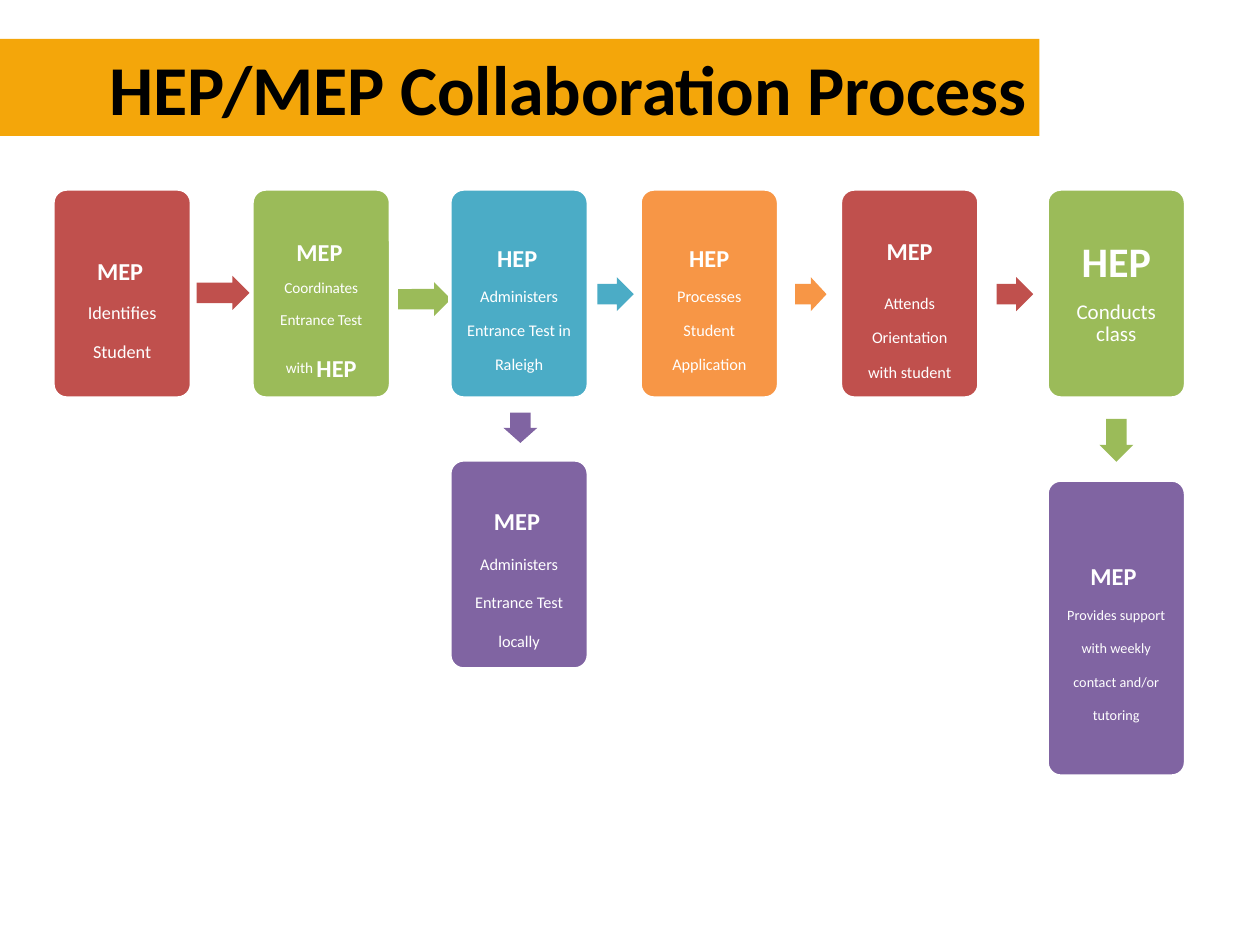
from copy import deepcopy
from dataclasses import dataclass

from pptx import Presentation
from pptx.dml.color import RGBColor
from pptx.enum.shapes import MSO_SHAPE
from pptx.enum.text import MSO_ANCHOR, MSO_AUTO_SIZE, PP_ALIGN
from pptx.util import Inches, Pt


@dataclass(frozen=True)
class Theme:
    font: str = "Calibri"
    gold: str = "F4A60A"
    red: str = "C0504D"
    green: str = "9BBB59"
    teal: str = "4BACC6"
    orange: str = "F79646"
    purple: str = "8064A2"
    white: str = "FFFFFF"
    black: str = "000000"
    title: int = 40
    agency: int = 24
    large: int = 18
    body: int = 16
    compact: int = 15
    small: int = 14
    tiny: int = 12


THEME = Theme()
CARD_WIDTH, CARD_HEIGHT, CARD_TOP = 1.1, 1.66, 1.5
ARROW_HEIGHT = 0.27


class ProcessSlide:
    def __init__(self, slide, theme):
        self.slide = slide
        self.theme = theme

    def block(self, preset, left, top, width, height, color):
        block = self.slide.shapes.add_shape(
            preset, Inches(left), Inches(top), Inches(width), Inches(height))
        block.shadow.inherit = False
        block.fill.solid()
        block.fill.fore_color.rgb = RGBColor.from_string(color)
        block.line.fill.background()
        return block

    def run(self, paragraph, text, size, bold, color, lowered=False):
        run = paragraph.add_run()
        run.text = text
        run.font.name = self.theme.font
        run.font.size = Pt(size)
        run.font.bold = bold
        run.font.color.rgb = RGBColor.from_string(color)
        if lowered:
            run.font._element.set("baseline", "-25000")
        return run

    def title(self, text, left, top, width, height):
        banner = self.block(MSO_SHAPE.RECTANGLE, left, top, width, height, self.theme.gold)
        frame = banner.text_frame
        frame.word_wrap = True
        frame.auto_size = MSO_AUTO_SIZE.SHAPE_TO_FIT_TEXT
        frame.vertical_anchor = MSO_ANCHOR.TOP
        heading = frame.paragraphs[0]
        heading.alignment = PP_ALIGN.RIGHT
        self.run(heading, text, self.theme.title, True, self.theme.black)

    def card(self, left, color, paragraphs, top=CARD_TOP, height=CARD_HEIGHT,
             line_spacing=0.9, after=0, lowered=True):
        card = self.block(MSO_SHAPE.ROUNDED_RECTANGLE, left, top, CARD_WIDTH, height, color)
        card.adjustments[0] = 0.1
        card.line.color.rgb = RGBColor.from_string(self.theme.white)
        card.line.width = Pt(2)
        frame = card.text_frame
        frame.word_wrap = True
        frame.vertical_anchor = MSO_ANCHOR.MIDDLE
        frame.margin_left = frame.margin_right = Inches(0.1)
        frame.margin_top = frame.margin_bottom = Inches(0.1)
        for index, runs in enumerate(paragraphs):
            paragraph = frame.add_paragraph() if index else frame.paragraphs[0]
            paragraph.alignment = PP_ALIGN.CENTER
            paragraph.line_spacing = line_spacing
            paragraph.space_after = Pt(round(after * runs[0][1], 1))
            for text, size, bold in runs:
                first, *rest = text.split("\n")
                run = self.run(paragraph, first, size, bold, self.theme.white, lowered)
                for line in rest:
                    paragraph.add_line_break()
                    paragraph._p[-1].append(deepcopy(run.font._element))
                    self.run(paragraph, line, size, bold, self.theme.white, lowered)

    def arrow(self, left, top, length, color, rotation=0):
        arrow = self.block(MSO_SHAPE.RIGHT_ARROW, left, top, length, ARROW_HEIGHT, color)
        arrow.adjustments[0] = 0.6
        arrow.adjustments[1] = 0.5
        arrow.rotation = rotation


def main():
    presentation = Presentation()
    presentation.slide_width = Inches(10)
    presentation.slide_height = Inches(7.5)
    t = THEME
    process = ProcessSlide(presentation.slides.add_slide(presentation.slide_layouts[6]), t)
    mep = ("MEP", t.agency, True)
    hep = ("HEP", t.agency, True)

    process.title("HEP/MEP Collaboration Process", 0, 0.31, 8.25, 0.77)

    process.card(0.42, t.red, [
        [mep, (" ", t.large, False)],
        [("Identifies Student", t.large, False)]])
    process.arrow(1.56, 2.19, 0.42, t.red)

    process.card(2, t.green, [
        [mep, (" \nCoordinates Entrance Test with ", t.compact, False), hep]])
    process.arrow(3.16, 2.24, 0.42, t.green, rotation=359.8)

    process.card(3.57, t.purple, [
        [mep, (" ", t.large, False)],
        [("Administers Entrance Test locally", t.body, False)]],
        top=3.65, line_spacing=1.0)
    process.arrow(4.01, 3.26, 0.24, t.purple, rotation=90)

    process.card(3.57, t.teal, [
        [hep, (" ", t.body, False)],
        [("Administers Entrance Test in Raleigh", t.body, False)]])
    process.arrow(4.74, 2.2, 0.29, t.teal)

    process.card(5.08, t.orange, [
        [hep],
        [("Processes Student Application", t.body, False)]])
    process.arrow(6.31, 2.2, 0.25, t.orange)

    process.card(6.67, t.red, [
        [mep],
        [("Attends Orientation with student", t.body, False)]], after=0.35)
    process.arrow(7.91, 2.2, 0.29, t.red)

    process.card(8.31, t.green, [
        [hep],
        [("Conducts class", t.tiny, False)]], after=0.35, lowered=False)
    process.arrow(8.69, 3.36, 0.34, t.green, rotation=90)

    process.card(8.31, t.purple, [
        [("MEP ", t.agency, True)],
        [("Provides support with weekly contact and/or tutoring", t.small, False)]],
        top=3.81, height=2.35, line_spacing=1.0)

    presentation.save("out.pptx")


if __name__ == "__main__":
    main()
